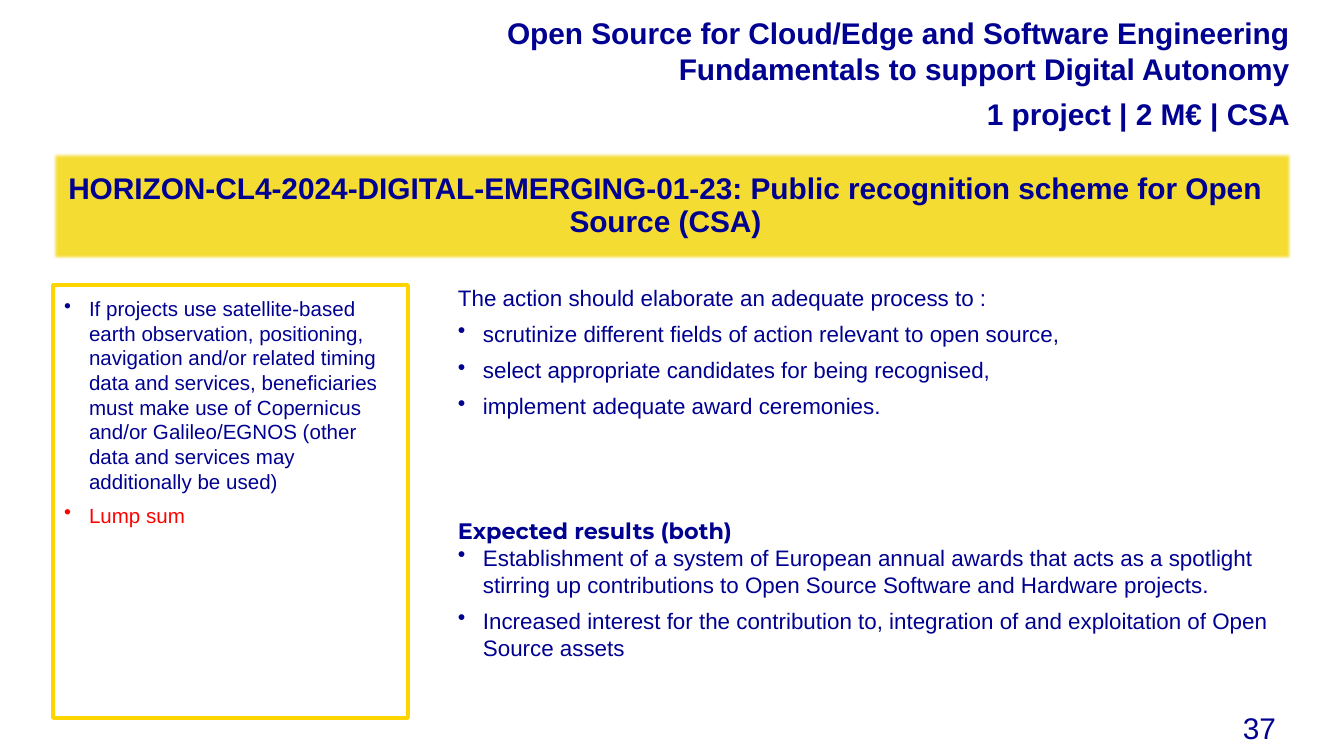
"""Build the slide on the public recognition scheme for open source."""
import pptx
import pptx.dml.color
import pptx.enum.shapes
import pptx.enum.text
import pptx.util
from lxml import etree

COLORS = {"navy": "000091", "yellow": "F5DC32", "gold": "FFD500", "red": "FF0000"}
ALIGN = pptx.enum.text.PP_ALIGN
ANCHOR = pptx.enum.text.MSO_ANCHOR
PX = 914400 / 134.4
W, H = 1344, 756

TITLE = [{"text": "HORIZON-CL4-2024-DIGITAL-EMERGING-01-23: Public recognition scheme "
                  "for Open Source (CSA)", "bold": True, "spacing": 0.9}]
HEADER = [
    {"text": "Open Source for Cloud/Edge and Software Engineering Fundamentals "
             "to support Digital Autonomy", "bold": True, "after": 5},
    {"text": "1 project | 2 M€ | CSA", "bold": True, "after": 5},
]
CONDITIONS = [
    {"text": "If projects use satellite-based earth observation, positioning, navigation "
             "and/or related timing data and services, beneficiaries must make use of "
             "Copernicus and/or Galileo/EGNOS (other data and services may additionally "
             "be used)", "bullet": True, "after": 5},
    {"text": "Lump sum", "bullet": True, "after": 5, "color": "red"},
]
ACTIONS = [
    {"text": "The action should elaborate an adequate process to :", "after": 5},
    {"text": "scrutinize different fields of action relevant to open source,",
     "bullet": True, "after": 5},
    {"text": "select appropriate candidates for being recognised,",
     "bullet": True, "after": 5},
    {"text": "implement adequate award ceremonies.", "bullet": True, "after": 5},
    {"text": "Expected results (both)", "bold": True, "font": "Montserrat",
     "before": 46, "spacing": 1.1},
    {"text": "Establishment of a system of European annual awards that acts as a spotlight "
             "stirring up contributions to Open Source Software and Hardware projects.",
     "bullet": True, "after": 5},
    {"text": "Increased interest for the contribution to, integration of and exploitation "
             "of Open Source assets", "bullet": True, "after": 5},
]
PAGE = [{"text": "37"}]


def px(n):
    return pptx.util.Emu(round(n * PX))


def rgb(name):
    return pptx.dml.color.RGBColor.from_string(COLORS[name])


def add_bullet(p):
    pPr = p._p.get_or_add_pPr()
    pPr.set("marL", str(px(25)))
    pPr.set("indent", str(-px(25)))
    etree.SubElement(pPr, pptx.oxml.ns.qn("a:buChar")).set("char", "•")


def write(sp, paragraphs, size, align=ALIGN.LEFT, anchor=ANCHOR.TOP, insets=(0, 0, 0, 0)):
    tf = sp.text_frame
    tf.word_wrap = True
    tf.vertical_anchor = anchor
    tf.margin_left, tf.margin_top, tf.margin_right, tf.margin_bottom = map(px, insets)
    for i, item in enumerate(paragraphs):
        p = tf.add_paragraph() if i else tf.paragraphs[0]
        p.alignment = align
        p.line_spacing = item.get("spacing", 1.0)
        p.space_before = pptx.util.Pt(item.get("before", 0))
        p.space_after = pptx.util.Pt(item.get("after", 0))
        if item.get("bullet"):
            add_bullet(p)
        r = p.add_run()
        r.text = item["text"]
        r.font.name = item.get("font", "Arial")
        r.font.size = pptx.util.Pt(size)
        r.font.bold = item.get("bold", False)
        r.font.color.rgb = rgb(item.get("color", "navy"))


def add_box(s, box):
    sp = s.shapes.add_shape(pptx.enum.shapes.MSO_SHAPE.RECTANGLE, *map(px, box))
    sp.shadow.inherit = False
    return sp


def add_text(s, box):
    return s.shapes.add_textbox(*map(px, box))


def main():
    prs = pptx.Presentation()
    prs.slide_width, prs.slide_height = px(W), px(H)
    s = prs.slides.add_slide(prs.slide_layouts[6])

    banner = add_box(s, (53, 154, 1238, 105))
    banner.fill.solid()
    banner.fill.fore_color.rgb = rgb("yellow")
    banner.line.fill.background()
    effects = banner._element.spPr.find(pptx.oxml.ns.qn("a:effectLst"))
    etree.SubElement(effects, pptx.oxml.ns.qn("a:softEdge")).set("rad", "12700")
    write(banner, TITLE, 16, ALIGN.CENTER, ANCHOR.MIDDLE, (0, 0, 13, 0))

    write(add_text(s, (363, 20, 927, 106)), HEADER, 16, ALIGN.RIGHT, ANCHOR.MIDDLE)

    frame = add_box(s, (53, 285, 355, 433))
    frame.fill.background()
    frame.line.color.rgb = rgb("gold")
    frame.line.width = pptx.util.Pt(2)
    write(frame, CONDITIONS, 11, insets=(11, 11, 11, 11))

    write(add_text(s, (458, 284, 843, 445)), ACTIONS, 12)
    write(add_text(s, (1117, 703, 172, 52)), PAGE, 16, ALIGN.RIGHT, insets=(13, 7, 13, 7))

    prs.save("out.pptx")


if __name__ == "__main__":
    main()
